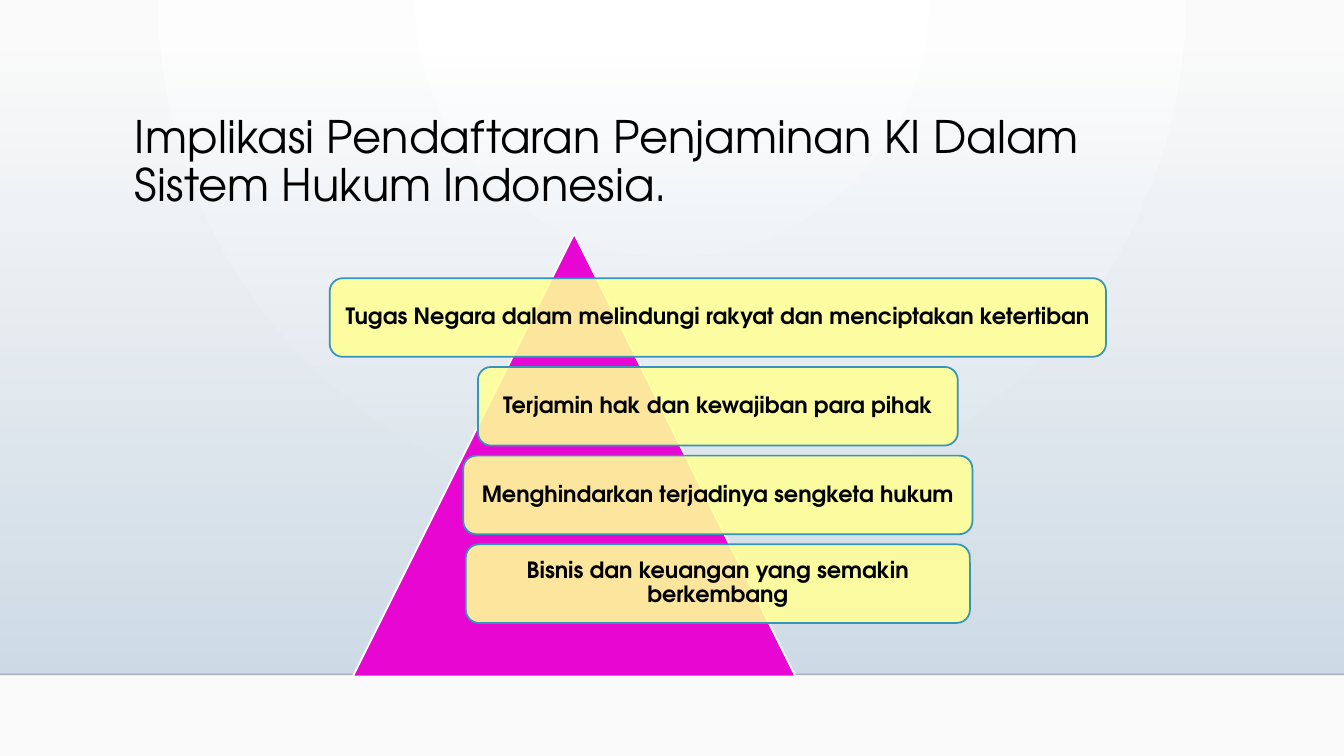
from lxml import etree
from pptx import Presentation
from pptx import util as u
from pptx.dml.color import RGBColor
from pptx.enum import shapes, text
from pptx.oxml.ns import qn

FONT = "TeX Gyre Adventor"
CARDS = [
    ("Tugas Negara dalam melindungi rakyat dan menciptakan ketertiban", 7.7),
    ("Terjamin hak dan kewajiban para pihak", 4.76),
    ("Menghindarkan terjadinya sengketa hukum", 5.05),
    ("Bisnis dan keuangan yang semakin berkembang", 5),
]


def rgb(value):
    return RGBColor.from_string(value)


def set_alpha(element, percent):
    color = next(element.iter(qn("a:srgbClr")))
    etree.SubElement(color, qn("a:alpha")).set("val", str(percent * 1000))


def set_gradient(fill, colors):
    fill.gradient()
    for stop, color in zip(fill.gradient_stops, colors):
        stop.color.rgb = rgb(color)


def add_preset(s, kind, x, y, w, h, fill=None, line=None):
    sp = s.shapes.add_shape(kind, *map(u.Inches, (x, y, w, h)))
    sp.shadow.inherit = False
    if fill:
        sp.fill.solid()
        sp.fill.fore_color.rgb = rgb(fill)
    if line:
        sp.line.color.rgb = rgb(line)
        sp.line.width = u.Pt(1.25)
    else:
        sp.line.fill.background()
    return sp


def write_text(tf, words, size, bold, align, inset_x, inset_y):
    tf.word_wrap = True
    tf.vertical_anchor = text.MSO_ANCHOR.MIDDLE
    tf.margin_left = tf.margin_right = u.Inches(inset_x)
    tf.margin_top = tf.margin_bottom = u.Inches(inset_y)
    p = tf.paragraphs[0]
    p.text = words
    p.alignment = align
    p.line_spacing = 0.9
    p.font.name = FONT
    p.font.size = u.Pt(size)
    p.font.bold = bold
    p.font.color.rgb = rgb("000000")


def add_backdrop(s, w, h):
    set_gradient(s.background.fill, ["FFFFFF", "FAFAFA"])
    grad = s.element.find(".//" + qn("a:gradFill"))
    grad.remove(grad.find(qn("a:lin")))
    radial = etree.SubElement(grad, qn("a:path"), path="circle")
    etree.SubElement(radial, qn("a:fillToRect"), l="43000", t="0", r="43000", b="100000")

    floor = h - 0.81
    band = add_preset(s, shapes.MSO_SHAPE.RECTANGLE, 0, 0.51, w, floor - 0.51)
    set_gradient(band.fill, ["CEDBE6", "D0DDE7"])
    band.fill.gradient_angle = 270
    set_alpha(band.element.spPr, 0)

    edge = s.shapes.add_connector(
        shapes.MSO_CONNECTOR.STRAIGHT, 0, u.Inches(floor), u.Inches(w), u.Inches(floor))
    edge.line.color.rgb = rgb("000001")
    edge.line.width = u.Pt(1)
    set_alpha(edge.element.spPr, 20)
    etree.SubElement(edge.element.spPr, qn("a:effectLst"))


def add_title(s, x, y, w, h):
    sp = s.shapes.add_textbox(*map(u.Inches, (x, y, w, h)))
    write_text(sp.text_frame,
               "Implikasi Pendaftaran Penjaminan KI Dalam Sistem Hukum Indonesia.",
               32, False, text.PP_ALIGN.LEFT, 0.1, 0.05)


def add_pyramid(s, x, y, size):
    add_preset(s, shapes.MSO_SHAPE.ISOSCELES_TRIANGLE, x, y, size, size, "E806D2", "FFFFFF")
    center, top, height, pitch = x + 3.62, y + 0.44, 0.78, 0.88
    for i, (words, width) in enumerate(CARDS):
        card = add_preset(s, shapes.MSO_SHAPE.ROUNDED_RECTANGLE, center - width / 2,
                          top + i * pitch, width, height, "FFFF99", "3494BA")
        set_alpha(card.element.spPr, 90)
        write_text(card.text_frame, words, 16, True, text.PP_ALIGN.CENTER, 0.07, 0.07)


def main():
    prs = Presentation()
    prs.slide_width = u.Inches(13.33)
    prs.slide_height = u.Inches(7.5)
    s = prs.slides.add_slide(prs.slide_layouts[6])
    add_backdrop(s, 13.33, 7.5)
    add_title(s, 1.24, 1.04, 10.5, 1.15)
    add_pyramid(s, 3.5, 2.32, 4.39)
    prs.save("out.pptx")


if __name__ == "__main__":
    main()
